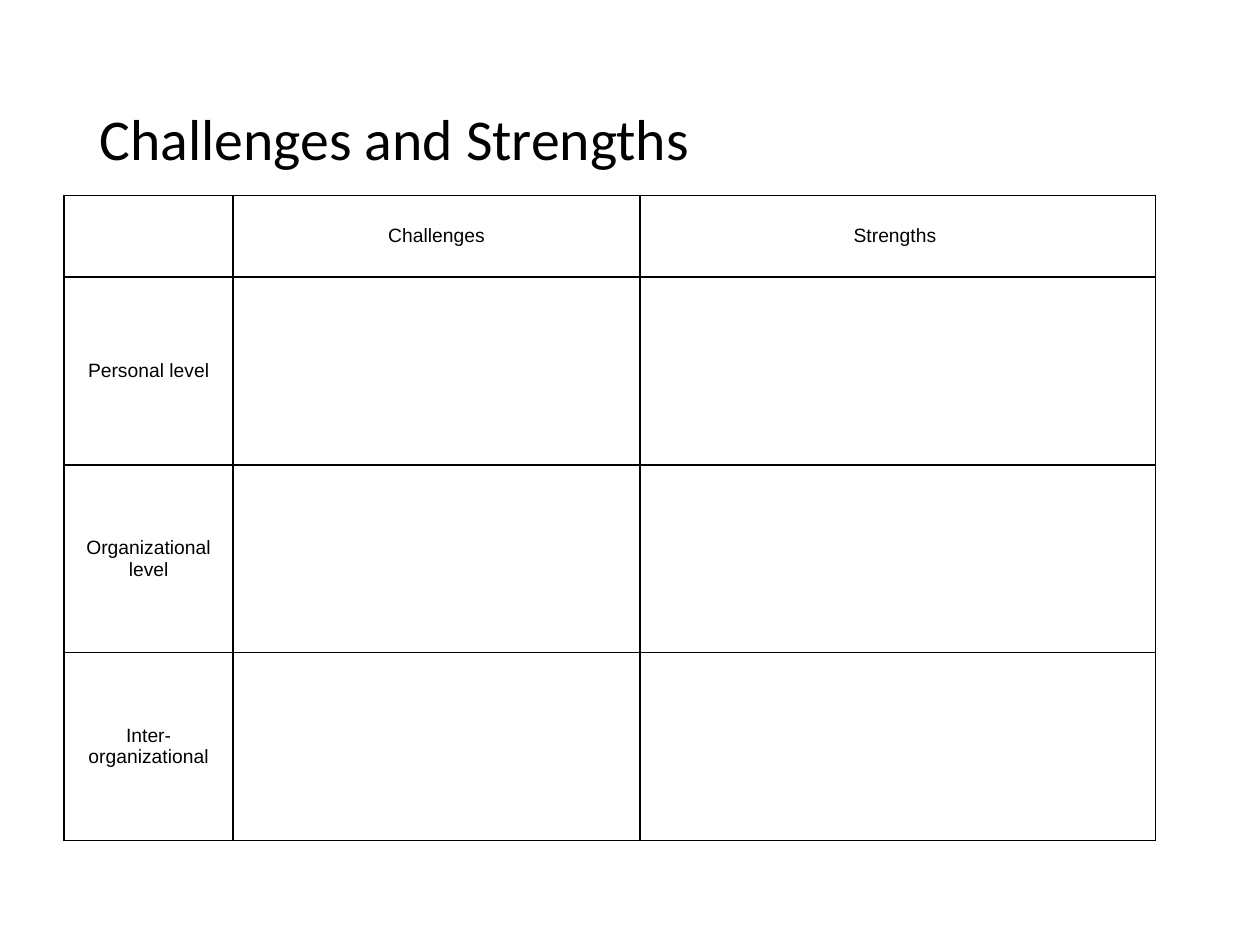
from lxml import etree
from pptx import Presentation
from pptx.dml.color import RGBColor
from pptx.enum.text import MSO_ANCHOR, PP_ALIGN
from pptx.oxml.ns import qn
from pptx.util import Inches, Pt

MIDDLE = MSO_ANCHOR.MIDDLE
LEFT, CENTER = PP_ALIGN.LEFT, PP_ALIGN.CENTER
TITLE_ONLY = 5
COLORS = {"text": "000000", "border": "000000", "background": "FFFFFF"}


class SlideBuilder:
    title_font, title_size = "Calibri", 33
    table_font, table_size = "Arial", 11
    border_width = 1

    def __init__(self, prs):
        self.slide = prs.slides.add_slide(prs.slide_layouts[TITLE_ONLY])

    def format_paragraph(self, p, font, size, align):
        p.alignment = align
        p.font.size = Pt(size)
        for r in p.runs:
            r.font.name = font
            r.font.size = Pt(size)
            r.font.color.rgb = RGBColor.from_string(COLORS["text"])

    def title(self, text, left, top, width, height):
        sp = self.slide.shapes.title
        sp.left, sp.top = Inches(left), Inches(top)
        sp.width, sp.height = Inches(width), Inches(height)
        tf = sp.text_frame
        tf.text = text
        tf.word_wrap = True
        tf.vertical_anchor = MIDDLE
        p = tf.paragraphs[0]
        p.line_spacing = 0.9
        self.format_paragraph(p, self.title_font, self.title_size, LEFT)

    def cell_borders(self, cell):
        tc_pr = cell._tc.get_or_add_tcPr()
        for i, side in enumerate(("lnL", "lnR", "lnT", "lnB")):
            ln = etree.Element(qn(f"a:{side}"), w=str(Pt(self.border_width)))
            fill = etree.SubElement(ln, qn("a:solidFill"))
            etree.SubElement(fill, qn("a:srgbClr"), val=COLORS["border"])
            tc_pr.insert(i, ln)

    def table(self, rows, left, top, col_widths, row_heights):
        frame = self.slide.shapes.add_table(
            len(rows), len(col_widths), Inches(left), Inches(top),
            Inches(sum(col_widths)), Inches(sum(row_heights)))
        table = frame.table
        table.first_row = table.horz_banding = False
        for column, width in zip(table.columns, col_widths):
            column.width = Inches(width)
        for row, height, texts in zip(table.rows, row_heights, rows):
            row.height = Inches(height)
            for cell, text in zip(row.cells, texts):
                cell.text_frame.text = text
                cell.vertical_anchor = MIDDLE
                cell.fill.solid()
                cell.fill.fore_color.rgb = RGBColor.from_string(COLORS["background"])
                self.cell_borders(cell)
                self.format_paragraph(cell.text_frame.paragraphs[0],
                                      self.table_font, self.table_size, CENTER)


def main():
    prs = Presentation()
    prs.slide_width, prs.slide_height = Inches(10), Inches(7.5)
    builder = SlideBuilder(prs)

    # Title
    builder.title("Challenges and Strengths", 0.69, 0.4, 8.62, 1.45)

    # Grid of levels to be filled in
    levels = ["Personal level", "Organizational level", "Inter-organizational"]
    rows = [["", "Challenges", "Strengths "]]
    rows += [[level, "", ""] for level in levels]
    builder.table(rows, 0.51, 1.55, [1.34, 3.23, 4.09],
                  [0.65] + [1.49] * len(levels))

    prs.save("out.pptx")


if __name__ == "__main__":
    main()
